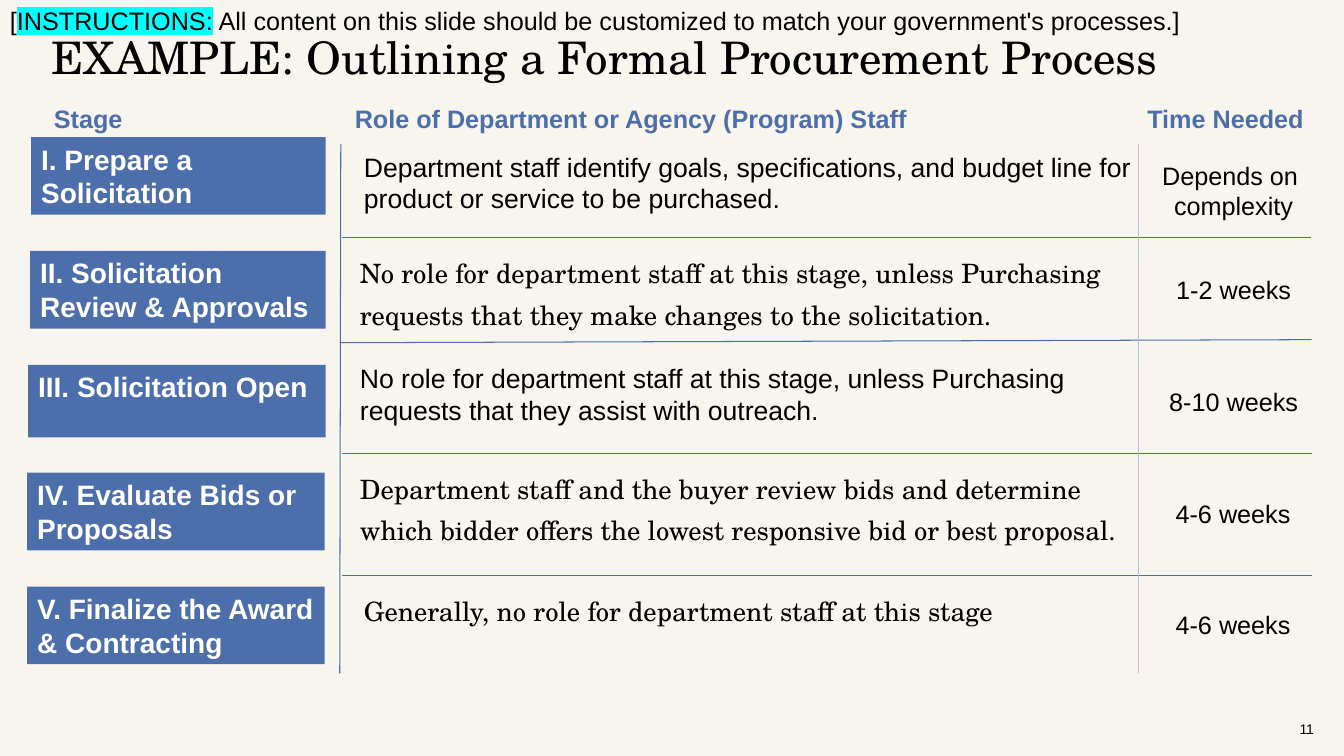
from lxml import etree
from pptx import Presentation
from pptx.dml.color import RGBColor
from pptx.enum import shapes, text
from pptx.oxml import ns
from pptx.util import Inches, Pt

COLORS = {
    "background": "F8F5EE", "blue": "4C6EAB", "pale_blue": "ACC1DA",
    "border": "F7F5EF", "black": "000000", "white": "FFFFFF", "cyan": "00FFFF",
}
SANS, SERIF = "Arial", "TeX Gyre Schola"
LEFT, CENTER = text.PP_ALIGN.LEFT, text.PP_ALIGN.CENTER


def write(frame, lines, size, color="black", name=SANS, bold=False,
          align=LEFT, **formats):
    """Fill a text frame; each line is a list of runs, formats go to paragraphs."""
    for index, runs in enumerate(lines):
        paragraph = frame.paragraphs[0] if index == 0 else frame.add_paragraph()
        for key, value in {"alignment": align, **formats}.items():
            setattr(paragraph, key, value)
        for words in runs:
            font_run = paragraph.add_run()
            font_run.text = words
            font = font_run.font
            for key, value in {"size": Pt(size), "name": name, "bold": bold}.items():
                setattr(font, key, value)
            font.color.rgb = RGBColor.from_string(COLORS[color])


def add_label(box, lines, size, wrap=True, anchor=text.MSO_ANCHOR.TOP, **formats):
    frame = slide.shapes.add_textbox(*map(Inches, box)).text_frame
    frame.word_wrap = wrap
    frame.vertical_anchor = anchor
    write(frame, lines, size, **formats)
    return frame


presentation = Presentation()
presentation.slide_width, presentation.slide_height = Inches(13.33), Inches(7.5)
slide = presentation.slides.add_slide(presentation.slide_layouts[6])
slide.background.fill.solid()
slide.background.fill.fore_color.rgb = RGBColor.from_string(COLORS["background"])

add_label((12.79, 7.03, 3.11, 0.4), [["11"]], 10, anchor=text.MSO_ANCHOR.MIDDLE)
title = add_label((0.41, 0.29, 12, 0.59),
                  [["EXAMPLE: Outlining a Formal Procurement Process"]], 32, name=SERIF)
title.margin_top = 0

# Stage boxes
stages = [
    ("I. Prepare a Solicitation", 0.31, 1.36, 2.92, 0.77),
    ("II. Solicitation Review & Approvals", 0.3, 2.49, 2.93, 0.77),
    ("III. Solicitation Open", 0.28, 3.62, 2.95, 0.72),
    ("IV. Evaluate Bids or Proposals", 0.27, 4.69, 2.95, 0.77),
    ("V. Finalize the Award & Contracting", 0.27, 5.82, 2.95, 0.77),
]
for stage, *box in stages:
    shape = slide.shapes.add_shape(shapes.MSO_SHAPE.RECTANGLE, *map(Inches, box))
    shape.shadow.inherit = False
    shape.fill.solid()
    shape.fill.fore_color.rgb = RGBColor.from_string(COLORS["blue"])
    shape.line.fill.background()
    shape.text_frame.word_wrap = True
    shape.text_frame.vertical_anchor = text.MSO_ANCHOR.TOP
    write(shape.text_frame, [[stage]], 20, "white", bold=True, space_after=Pt(8))

# Staff roles, one single-cell table per stage
roles = [
    ("Department staff identify goals, specifications, and budget line for "
     "product or service to be purchased.", SANS, 3.51, 1.5, 7.95),
    ("No role for department staff at this stage, unless Purchasing "
     "requests that they make changes to the solicitation.", SERIF, 3.47, 2.49, 7.88),
    ("No role for department staff at this stage, unless Purchasing "
     "requests that they assist with outreach.", SANS, 3.47, 3.6, 7.82),
    ("Department staff and the buyer review bids and determine "
     "which bidder offers the lowest responsive bid or best proposal.",
     SERIF, 3.47, 4.63, 7.77),
    ("Generally, no role for department staff at this stage", SERIF, 3.51, 5.84, 7.9),
]
for role, typeface, left, top, width in roles:
    table = slide.shapes.add_table(
        1, 1, Inches(left), Inches(top), Inches(width), Inches(1.02)).table
    table.first_row = table.horz_banding = False
    cell = table.cell(0, 0)
    cell.margin_top = cell.margin_bottom = 0
    write(cell.text_frame, [[role]], 19, name=typeface, line_spacing=1.07)
    properties = cell._tc.get_or_add_tcPr()
    for side, points in {"lnL": 1, "lnR": 1, "lnT": 1, "lnB": 3}.items():
        border = etree.SubElement(properties, ns.qn("a:" + side), w=str(Pt(points)))
        fill = etree.SubElement(border, ns.qn("a:solidFill"))
        etree.SubElement(fill, ns.qn("a:srgbClr"), val=COLORS["border"])
    cell.fill.background()

# Grid lines
grid_lines = [
    (3.37, 6.68, 3.38, 1.43, "blue"),
    (3.39, 2.36, 13, 2.36, "blue"),
    (3.37, 3.4, 13.01, 3.37, "blue"),
    (3.39, 4.5, 13.01, 4.5, "blue"),
    (3.39, 5.71, 13.01, 5.71, "blue"),
    (11.29, 1.43, 11.29, 6.68, "pale_blue"),
]
for *ends, color in grid_lines:
    connector = slide.shapes.add_connector(
        shapes.MSO_CONNECTOR.STRAIGHT, *map(Inches, ends))
    connector.line.color.rgb = RGBColor.from_string(COLORS[color])
    connector.line.width = Pt(0.75)
    etree.SubElement(connector._element.spPr, ns.qn("a:effectLst"))

# Time needed
durations = [
    ([["Depends on "], ["complexity"]], 11.42, 1.54, 1.63, 0.71),
    ([["1-2 weeks"]], 11.54, 2.67, 1.39, 0.4),
    ([["8-10 weeks"]], 11.49, 3.78, 1.49, 0.4),
    ([["4-6 weeks"]], 11.53, 4.89, 1.4, 0.4),
    ([["4-6 weeks"]], 11.53, 6, 1.4, 0.4),
]
for lines, *box in durations:
    add_label(box, lines, 18, wrap=False, align=CENTER)

# Column headings
headings = [
    ("Time Needed", 11.12, 2.07, CENTER),
    ("Role of Department or Agency (Program) Staff", 3.42, 7.32, LEFT),
    ("Stage", -0.16, 2.07, CENTER),
]
for heading, left, width, align in headings:
    add_label((left, 0.98, width, 0.4), [[heading]], 18, color="blue", bold=True,
              align=align)

# Instruction line with its highlighted word
instructions = add_label((0, 0, 11.92, 0.4), [[
    "[", "INSTRUCTIONS:",
    " All content on this slide should be customized to match your "
    "government's processes.]"]], 18, wrap=False)
run_properties = instructions.paragraphs[0].runs[1].font._element
highlight = etree.Element(ns.qn("a:highlight"))
etree.SubElement(highlight, ns.qn("a:srgbClr"), val=COLORS["cyan"])
run_properties.find(ns.qn("a:solidFill")).addnext(highlight)

presentation.save("out.pptx")
